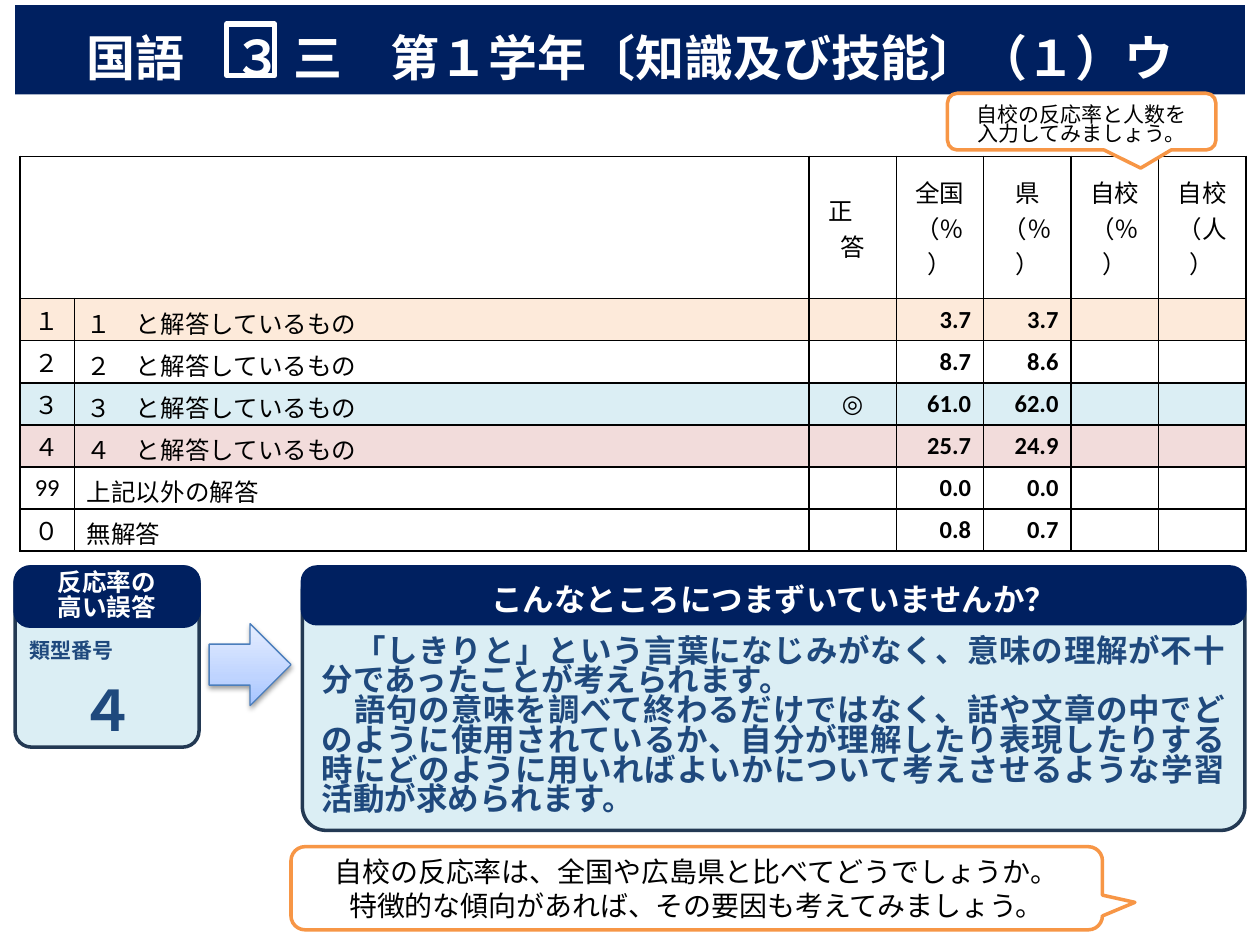
"""Build a slide on response rates for one Japanese language question."""
from lxml import etree
from pptx import Presentation
from pptx import util as u
from pptx.dml.color import RGBColor
from pptx.enum import shapes, text
from pptx.oxml import parse_xml
from pptx.oxml.ns import nsdecls, qn

COLS, ROWS = 100, 75
UNIT = u.Inches(0.1)
JP, LATIN = "Noto Sans CJK JP", "Calibri"
NAVY = RGBColor(0x00, 0x20, 0x60)
EDGE = RGBColor(0x23, 0x39, 0x53)
BLUE = RGBColor(0x1F, 0x49, 0x7D)
ORANGE = RGBColor(0xF7, 0x96, 0x46)
WHITE = RGBColor(0xFF, 0xFF, 0xFF)
BLACK = RGBColor(0x00, 0x00, 0x00)
PEACH = RGBColor(0xFD, 0xEA, 0xDA)
PALE = RGBColor(0xDB, 0xEE, 0xF4)
PINK = RGBColor(0xF2, 0xDC, 0xDB)
ARROW_EDGE = RGBColor(0x4B, 0x7E, 0xBC)
CENTER, RIGHT, JUSTIFY = (text.PP_ALIGN.CENTER, text.PP_ALIGN.RIGHT,
                          text.PP_ALIGN.JUSTIFY)
MIDDLE, BOTTOM = text.MSO_ANCHOR.MIDDLE, text.MSO_ANCHOR.BOTTOM
KIND = shapes.MSO_SHAPE

COL_WIDTHS = [4.3, 58.3] + [6.94] * 5
ROW_HEIGHTS = [11.3] + [3.33] * 6
HEADINGS = ["正　答", "全国（％）", "県（％）", "自校（％）", "自校（人）"]
ANSWERS = [
    ("１", "１　と解答しているもの", "", "3.7", "3.7", PEACH),
    ("２", "２　と解答しているもの", "", "8.7", "8.6", None),
    ("３", "３　と解答しているもの", "◎", "61.0", "62.0", PALE),
    ("４", "４　と解答しているもの", "", "25.7", "24.9", PINK),
    ("99", "上記以外の解答", "", "0.0", "0.0", None),
    ("０", "無解答", "", "0.8", "0.7", None),
]
ALIGNS = [CENTER, JUSTIFY, CENTER, RIGHT, RIGHT]


def grid(*lengths):
    """Turn grid counts into lengths."""
    return [u.Emu(round(n * UNIT)) for n in lengths]


def write(tf, content, size, color, bold=False, align=CENTER, latin=JP,
          spacing=()):
    """Set the text of a frame and format its paragraphs and runs."""
    tf.text = content
    for i, p in enumerate(tf.paragraphs):
        p.alignment = align
        if spacing:
            p.line_spacing = u.Pt(spacing[i])
        for r in p.runs:
            font = r.font
            font.size, font.bold, font.name = u.Pt(size), bold, latin
            font.color.rgb = color
            etree.SubElement(font._element, qn("a:ea"), typeface=JP)


def add_box(s, kind, place, fill, line, width, adjust=()):
    """Add a flat preset shape."""
    sp = s.shapes.add_shape(kind, *grid(*place))
    sp.shadow.inherit = False
    for i, value in enumerate(adjust):
        sp.adjustments[i] = value
    if fill is None:
        sp.fill.background()
    else:
        sp.fill.solid()
        sp.fill.fore_color.rgb = fill
    sp.line.color.rgb = line
    sp.line.width = u.Pt(width)
    sp.text_frame.word_wrap = True
    sp.text_frame.vertical_anchor = MIDDLE
    return sp


def add_title(s, content):
    """Place the title as a full-width banner."""
    sp = s.shapes.title
    sp.left, sp.top, sp.width, sp.height = grid(1.2, 0.4, 97.6, 7.1)
    sp.fill.solid()
    sp.fill.fore_color.rgb = NAVY
    tf = sp.text_frame
    tf.auto_size = text.MSO_AUTO_SIZE.NONE
    tf.vertical_anchor = MIDDLE
    tf.margin_top = u.Inches(0.16)
    write(tf, content, 28, WHITE, True)


def add_panel(s, place, head_rows, heading, size, spacing):
    """Add a rounded panel with a navy heading and return its body."""
    left, top, width, _ = place
    body = add_box(s, KIND.ROUNDED_RECTANGLE, place, PALE, EDGE, 2, [0.09])
    head = add_box(s, KIND.ROUNDED_RECTANGLE, (left, top, width, head_rows),
                   NAVY, NAVY, 2, [0.255])
    write(head.text_frame, heading, size, WHITE, True, spacing=spacing)
    body.text_frame.vertical_anchor = BOTTOM
    return body


def add_callout(s, place, adjust, content, size, spacing=()):
    """Add an orange speech balloon."""
    sp = add_box(s, KIND.ROUNDED_RECTANGULAR_CALLOUT, place, WHITE, ORANGE, 2,
                 adjust)
    write(sp.text_frame, content, size, BLACK, spacing=spacing)


def add_arrow(s, place):
    """Add the shaded arrow between the two panels."""
    sp = add_box(s, KIND.RIGHT_ARROW, place, None, ARROW_EDGE, 0.75)
    stops = "".join(
        f'<a:gs pos="{pos}000"><a:srgbClr val="{color}"/></a:gs>'
        for pos, color in [(0, "A4C4FF"), (35, "BFD4FF"), (100, "E6EEFF")])
    props = sp._element.spPr
    props.replace(props.find(qn("a:noFill")), parse_xml(
        f'<a:gradFill {nsdecls("a")} rotWithShape="1"><a:gsLst>{stops}'
        '</a:gsLst><a:lin ang="16200000" scaled="0"/></a:gradFill>'))
    props.find(qn("a:effectLst")).append(parse_xml(
        f'<a:outerShdw {nsdecls("a")} blurRad="{u.Pt(3.1)}" '
        f'dist="{u.Pt(1.6)}" dir="5400000" rotWithShape="0">'
        '<a:srgbClr val="000000"><a:alpha val="38000"/></a:srgbClr>'
        '</a:outerShdw>'))


def style_cell(cell, fill):
    """Give a cell its borders, fill and anchor."""
    props = cell._tc.get_or_add_tcPr()
    for side in ("lnL", "lnR", "lnT", "lnB"):
        props.append(parse_xml(
            f'<a:{side} {nsdecls("a")} w="{u.Pt(1)}"><a:solidFill>'
            f'<a:srgbClr val="{BLACK}"/></a:solidFill></a:{side}>'))
    if fill is None:
        cell.fill.background()
    else:
        cell.fill.solid()
        cell.fill.fore_color.rgb = fill
    cell.vertical_anchor = MIDDLE


def add_rates(s):
    """Add the table of response rates."""
    table = s.shapes.add_table(len(ROW_HEIGHTS), len(COL_WIDTHS), *grid(
        1.6, 12.4, sum(COL_WIDTHS), sum(ROW_HEIGHTS))).table
    table.first_row = table.horz_banding = False
    for column, width in zip(table.columns, grid(*COL_WIDTHS)):
        column.width = width
    for row, height in zip(table.rows, grid(*ROW_HEIGHTS)):
        row.height = height
    for cell in table.rows[0].cells:
        style_cell(cell, None)
    table.cell(0, 0).merge(table.cell(0, 1))
    for i, heading in enumerate(HEADINGS, 2):
        cell = table.cell(0, i)
        cell._tc.tcPr.set("vert", "eaVert")
        write(cell.text_frame, heading, 14, BLACK)
    for i, (*values, fill) in enumerate(ANSWERS, 1):
        for cell in table.rows[i].cells:
            style_cell(cell, fill)
            cell.margin_top = cell.margin_bottom = 0
        table.cell(i, 1).margin_top = u.Inches(0.05)
        for j, value in enumerate(values):
            if value:
                write(table.cell(i, j).text_frame, value, 14, BLACK, j > 2,
                      ALIGNS[j], LATIN)


def main():
    """Build and save the slide."""
    prs = Presentation()
    prs.slide_width, prs.slide_height = grid(COLS, ROWS)
    s = prs.slides.add_slide(prs.slide_layouts[5])
    add_title(s, "国語　３ 三　第１学年〔知識及び技能〕（１）ウ")
    add_rates(s)
    wrong = add_panel(s, (1.2, 45, 14.6, 14.3), 4.7,
                      "反応率の\n高い誤答", 14, (14, 14))
    wrong.text_frame.margin_bottom = 0
    write(wrong.text_frame, "４", 32, BLUE, True)
    reason = add_panel(s, (24, 45, 74.8, 20.9), 4.5,
                       "こんなところにつまずいていませんか？", 18, (26,))
    write(reason.text_frame,
          "　「しきりと」という言葉になじみがなく、意味の理解が不十分であったことが考えられます。\n"
          "　語句の意味を調べて終わるだけではなく、話や文章の中でどのように使用されているか、"
          "自分が理解したり表現したりする時にどのように用いればよいかについて"
          "考えさせるような学習活動が求められます。",
          18, BLUE, True, JUSTIFY, spacing=(17, 17))
    add_arrow(s, (16.6, 49.5, 6.5, 6.5))
    label = s.shapes.add_textbox(*grid(0.6, 50.1, 10.2, 3))
    label.text_frame.word_wrap = True
    write(label.text_frame, "類型番号", 12, BLUE, True)
    add_callout(s, (23.1, 67.2, 64.4, 6.6), (0.54, 0.17, 0.17),
                "自校の反応率は、全国や広島県と比べてどうでしょうか。\n"
                "特徴的な傾向があれば、その要因も考えてみましょう。", 16)
    add_callout(s, (75.2, 7.4, 21.3, 4.5), (0.22, 0.82, 0.17),
                "自校の反応率と人数を\n入力してみましょう。", 12, (17, 11))
    add_box(s, KIND.RECTANGLE, (18, 1.9, 3.8, 4.1), None, WHITE, 3)
    prs.save("out.pptx")


if __name__ == "__main__":
    main()
